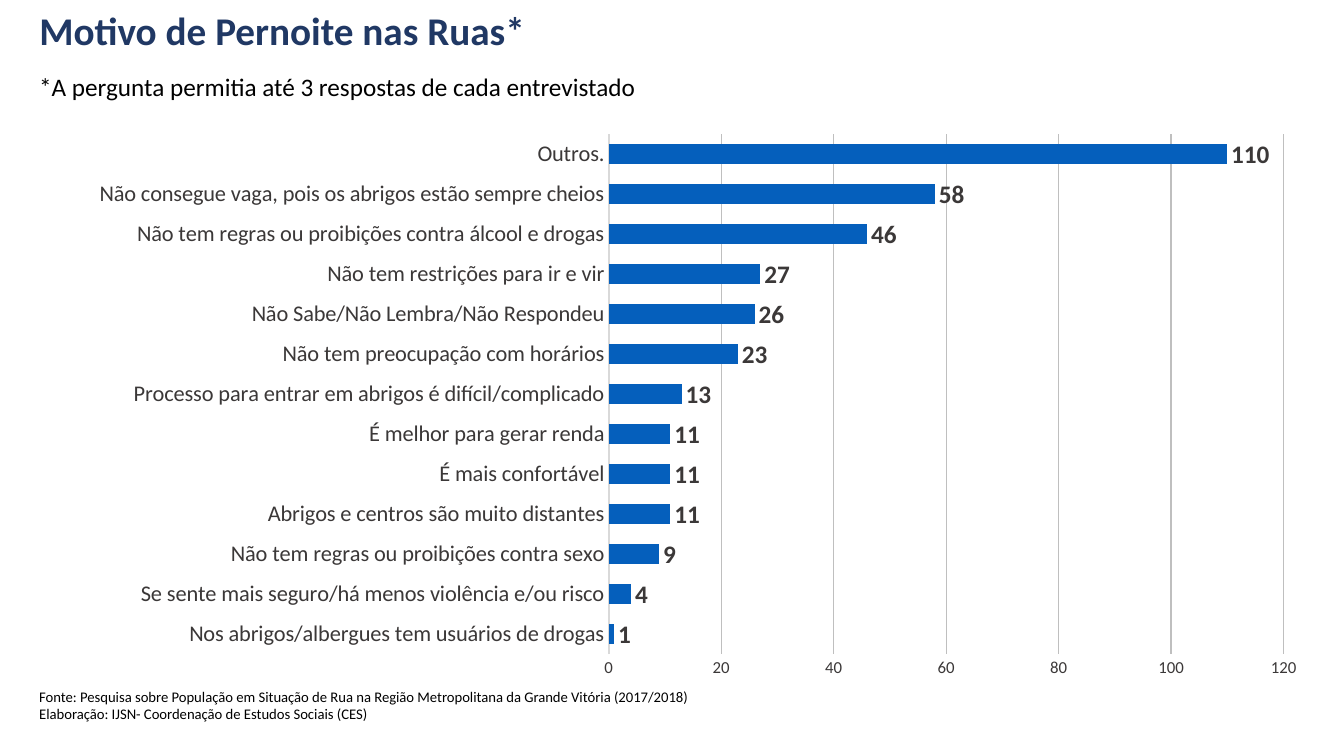
from dataclasses import dataclass

import pptx
import pptx.chart.data
import pptx.dml.color
import pptx.enum.chart
import pptx.enum.text
import pptx.oxml
import pptx.oxml.ns
import pptx.util
from pptx.util import Inches


@dataclass(frozen=True)
class Theme:
    font: str = "Calibri"
    title: str = "203864"
    text: str = "000000"
    label: str = "3B3838"
    bar: str = "055FBC"
    axis: str = "D9D9D9"
    grid: str = "BFBFBF"
    title_size: float = 28
    note_size: float = 18
    source_size: float = 10.5
    category_size: float = 16
    scale_size: float = 12


theme = Theme()


def style_font(font, size, color, bold=False):
    font.name = theme.font
    font.size = pptx.util.Pt(size)
    font.bold = bold
    font.color.rgb = pptx.dml.color.RGBColor.from_string(color)


def style_line(line, color, width):
    line.color.rgb = pptx.dml.color.RGBColor.from_string(color)
    line.width = pptx.util.Pt(width)


presentation = pptx.Presentation()
presentation.slide_width = Inches(13.33)
presentation.slide_height = Inches(7.5)
slide = presentation.slides.add_slide(presentation.slide_layouts[5])

# Title
title = slide.shapes.title
title.left, title.top = Inches(0.29), Inches(0.03)
title.width, title.height = Inches(12.72), Inches(0.62)
title.text_frame.text = "Motivo de Pernoite nas Ruas*"
title.text_frame.auto_size = pptx.enum.text.MSO_AUTO_SIZE.NONE
title.text_frame.vertical_anchor = pptx.enum.text.MSO_ANCHOR.MIDDLE
paragraph = title.text_frame.paragraphs[0]
paragraph.alignment = pptx.enum.text.PP_ALIGN.LEFT
paragraph.line_spacing = 0.8
style_font(paragraph.font, theme.title_size, theme.title, bold=True)

# Chart
reasons = [
    ("Nos abrigos/albergues tem usuários de drogas", 1),
    ("Se sente mais seguro/há menos violência e/ou risco", 4),
    ("Não tem regras ou proibições contra sexo", 9),
    ("Abrigos e centros são muito distantes", 11),
    ("É mais confortável", 11),
    ("É melhor para gerar renda", 11),
    ("Processo para entrar em abrigos é difícil/complicado", 13),
    ("Não tem preocupação com horários", 23),
    ("Não Sabe/Não Lembra/Não Respondeu", 26),
    ("Não tem restrições para ir e vir", 27),
    ("Não tem regras ou proibições contra álcool e drogas", 46),
    ("Não consegue vaga, pois os abrigos estão sempre cheios", 58),
    ("Outros.", 110),
]
chart_data = pptx.chart.data.CategoryChartData()
chart_data.categories = [reason for reason, count in reasons]
chart_data.add_series("Respostas", [count for reason, count in reasons])
chart = slide.shapes.add_chart(
    pptx.enum.chart.XL_CHART_TYPE.BAR_CLUSTERED,
    Inches(0.33), Inches(1.18), Inches(12.68), Inches(5.71), chart_data,
).chart
chart.has_legend = False
chart.has_title = False
style_font(chart.font, 10, theme.text)

plot = chart.plots[0]
plot.gap_width = 100
plot.vary_by_categories = False
fill = plot.series[0].format.fill
fill.solid()
fill.fore_color.rgb = pptx.dml.color.RGBColor.from_string(theme.bar)
plot.has_data_labels = True
labels = plot.data_labels
labels.show_value = True
labels.position = pptx.enum.chart.XL_LABEL_POSITION.OUTSIDE_END
style_font(labels.font, theme.note_size, theme.label, bold=True)

category_axis, value_axis = chart.category_axis, chart.value_axis
for axis, size in ((category_axis, theme.category_size), (value_axis, theme.scale_size)):
    axis.major_tick_mark = pptx.enum.chart.XL_TICK_MARK.NONE
    axis.minor_tick_mark = pptx.enum.chart.XL_TICK_MARK.NONE
    style_font(axis.tick_labels.font, size, theme.label)
style_line(category_axis.format.line, theme.axis, 1.5)
value_axis.format.line.fill.background()
value_axis.minimum_scale, value_axis.maximum_scale = 0, 120
value_axis.major_unit = 20
value_axis.has_major_gridlines = True
style_line(value_axis.major_gridlines.format.line, theme.grid, 0.75)

# Fixed plot area, as fractions of the chart frame
plot_area = chart.element.find(".//" + pptx.oxml.ns.qn("c:plotArea"))
for layout in plot_area.findall(pptx.oxml.ns.qn("c:layout")):
    plot_area.remove(layout)
plot_area.insert(0, pptx.oxml.parse_xml(
    f'<c:layout {pptx.oxml.ns.nsdecls("c")}><c:manualLayout>'
    '<c:layoutTarget val="inner"/><c:xMode val="edge"/><c:yMode val="edge"/>'
    '<c:x val="0.45"/><c:y val="0.027"/><c:w val="0.528"/><c:h val="0.903"/>'
    '</c:manualLayout></c:layout>'
))

# Source and note
text_boxes = [
    (6.64, 12.72, 0.58, pptx.enum.text.MSO_ANCHOR.BOTTOM, theme.source_size,
     ["Fonte: Pesquisa sobre População em Situação de Rua na Região Metropolitana da Grande Vitória (2017/2018)",
      "Elaboração: IJSN- Coordenação de Estudos Sociais (CES)"]),
    (0.66, 12.43, 0.4, pptx.enum.text.MSO_ANCHOR.TOP, theme.note_size,
     ["*A pergunta permitia até 3 respostas de cada entrevistado"]),
]
for top, width, height, anchor, size, lines in text_boxes:
    text_box = slide.shapes.add_textbox(Inches(0.29), Inches(top), Inches(width), Inches(height))
    text_frame = text_box.text_frame
    text_frame.word_wrap = True
    text_frame.vertical_anchor = anchor
    text_frame.text = "\n".join(lines)
    for paragraph in text_frame.paragraphs:
        style_font(paragraph.font, size, theme.text)

presentation.save("out.pptx")
